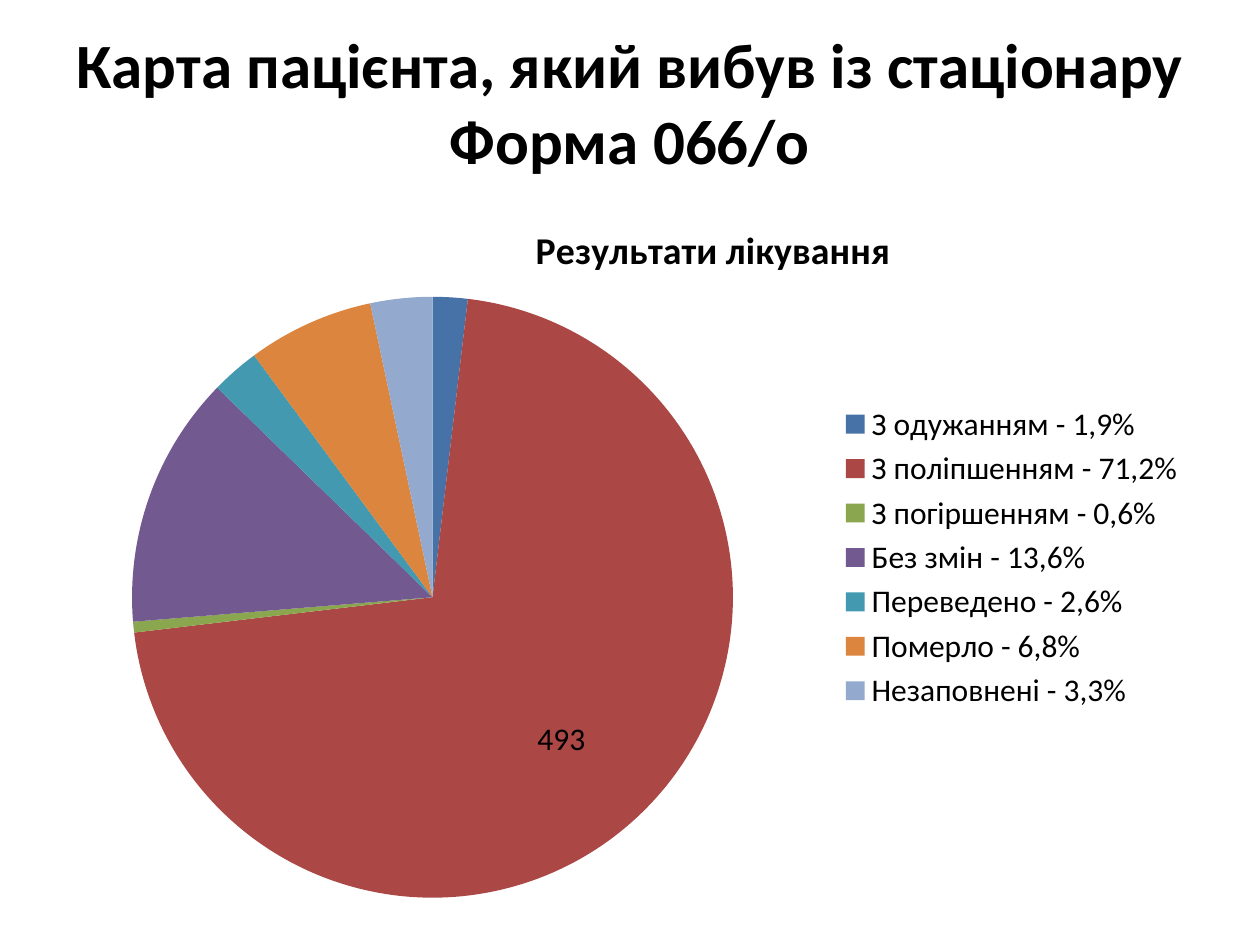
from dataclasses import dataclass

from lxml.etree import SubElement
from pptx import Presentation
from pptx.chart.chart import Chart
from pptx.chart.data import CategoryChartData
from pptx.dml.color import RGBColor
from pptx.enum.chart import XL_CHART_TYPE as ChartType
from pptx.enum.chart import XL_LABEL_POSITION as LabelPosition
from pptx.enum.chart import XL_LEGEND_POSITION as LegendPosition
from pptx.enum.text import MSO_ANCHOR as Anchor
from pptx.enum.text import PP_ALIGN as Align
from pptx.oxml.ns import qn
from pptx.slide import Slide
from pptx.util import Pt

PX = 914400 // 126
FONT = "Calibri"
BLACK = RGBColor(0x00, 0x00, 0x00)
BLUE = RGBColor(0x46, 0x72, 0xA8)
RED = RGBColor(0xAB, 0x47, 0x44)
GREEN = RGBColor(0x8A, 0xA6, 0x4F)
PURPLE = RGBColor(0x72, 0x59, 0x90)
TEAL = RGBColor(0x42, 0x99, 0xB0)
ORANGE = RGBColor(0xDC, 0x85, 0x3E)
LIGHT_BLUE = RGBColor(0x93, 0xA9, 0xCE)
CHART_TITLE = "Результати лікування"


@dataclass(frozen=True)
class Outcome:
    name: str
    patients: int
    color: RGBColor


OUTCOMES = [
    Outcome("З одужанням - 1,9%", 13, BLUE),
    Outcome("З поліпшенням - 71,2%", 493, RED),
    Outcome("З погіршенням - 0,6%", 4, GREEN),
    Outcome("Без змін - 13,6%", 94, PURPLE),
    Outcome("Переведено - 2,6%", 18, TEAL),
    Outcome("Померло - 6,8%", 47, ORANGE),
    Outcome("Незаповнені - 3,3%", 23, LIGHT_BLUE),
]


def px(length: int) -> int:
    return length * PX


def set_font(font, size: float, bold: bool) -> None:
    font.name = FONT
    font.size = Pt(size)
    font.bold = bold
    font.color.rgb = BLACK


def set_layout(parent, previous: str, **values: object) -> None:
    for old in parent.findall(qn("c:layout")):
        parent.remove(old)
    layout = SubElement(parent, qn("c:layout"))
    anchor = parent.find(qn(previous)) if previous else None
    parent.insert(0 if anchor is None else parent.index(anchor) + 1, layout)
    manual = SubElement(layout, qn("c:manualLayout"))
    for name, value in values.items():
        SubElement(manual, qn(f"c:{name}")).set("val", str(value))


def add_title(slide: Slide) -> None:
    title = slide.shapes.title
    title.left, title.top, title.width, title.height = map(px, (63, 38, 1134, 127))
    frame = title.text_frame
    frame.text = "Карта пацієнта, який вибув із стаціонару\vФорма 066/о"
    frame.vertical_anchor = Anchor.MIDDLE
    paragraph = frame.paragraphs[0]
    paragraph.alignment = Align.CENTER
    set_font(paragraph.font, 36, True)


def format_heading(chart: Chart) -> None:
    chart.has_title = True
    frame = chart.chart_title.text_frame
    frame.text = CHART_TITLE
    set_font(frame.paragraphs[0].font, 21.6, True)
    set_layout(chart.chart_title._element, "c:tx",
               xMode="edge", yMode="edge", x=0.41, y=0.03)
    chart.chart_title.include_in_layout = False


def format_pie(chart: Chart) -> None:
    plot = chart.plots[0]
    plot.vary_by_categories = True
    plot.has_data_labels = True
    labels = plot.data_labels
    labels.show_value = True
    labels.show_percentage = False
    labels.position = LabelPosition.BEST_FIT
    set_font(labels.font, 18, False)
    points = plot.series[0].points
    for index, outcome in enumerate(OUTCOMES):
        fill = points[index].format.fill
        fill.solid()
        fill.fore_color.rgb = outcome.color
    largest = points[1].data_label
    largest.position = LabelPosition.CENTER
    set_font(largest.font, 18, False)
    label_element = plot.series[0]._element.find(f".//{qn('c:dLbl')}")
    set_layout(label_element, "c:idx", x=0.02, y=0.05)
    set_layout(plot._element.getparent(), "", layoutTarget="inner",
               xMode="edge", yMode="edge", x=0.06, y=0.13, w=0.53, h=0.85)


def add_outcome_chart(slide: Slide) -> None:
    data = CategoryChartData()
    data.categories = [outcome.name for outcome in OUTCOMES]
    data.add_series(CHART_TITLE, [outcome.patients for outcome in OUTCOMES])
    frame = slide.shapes.add_chart(
        ChartType.PIE, px(64), px(195), px(1134), px(725), data
    )
    chart = frame.chart
    set_font(chart.font, 18, False)
    format_heading(chart)
    format_pie(chart)
    chart.has_legend = True
    chart.legend.position = LegendPosition.RIGHT
    chart.legend.include_in_layout = False
    set_font(chart.legend.font, 18, False)


def main() -> None:
    presentation = Presentation()
    presentation.slide_width = px(1260)
    presentation.slide_height = px(945)
    slide = presentation.slides.add_slide(presentation.slide_layouts[5])
    add_title(slide)
    add_outcome_chart(slide)
    presentation.save("out.pptx")


if __name__ == "__main__":
    main()
